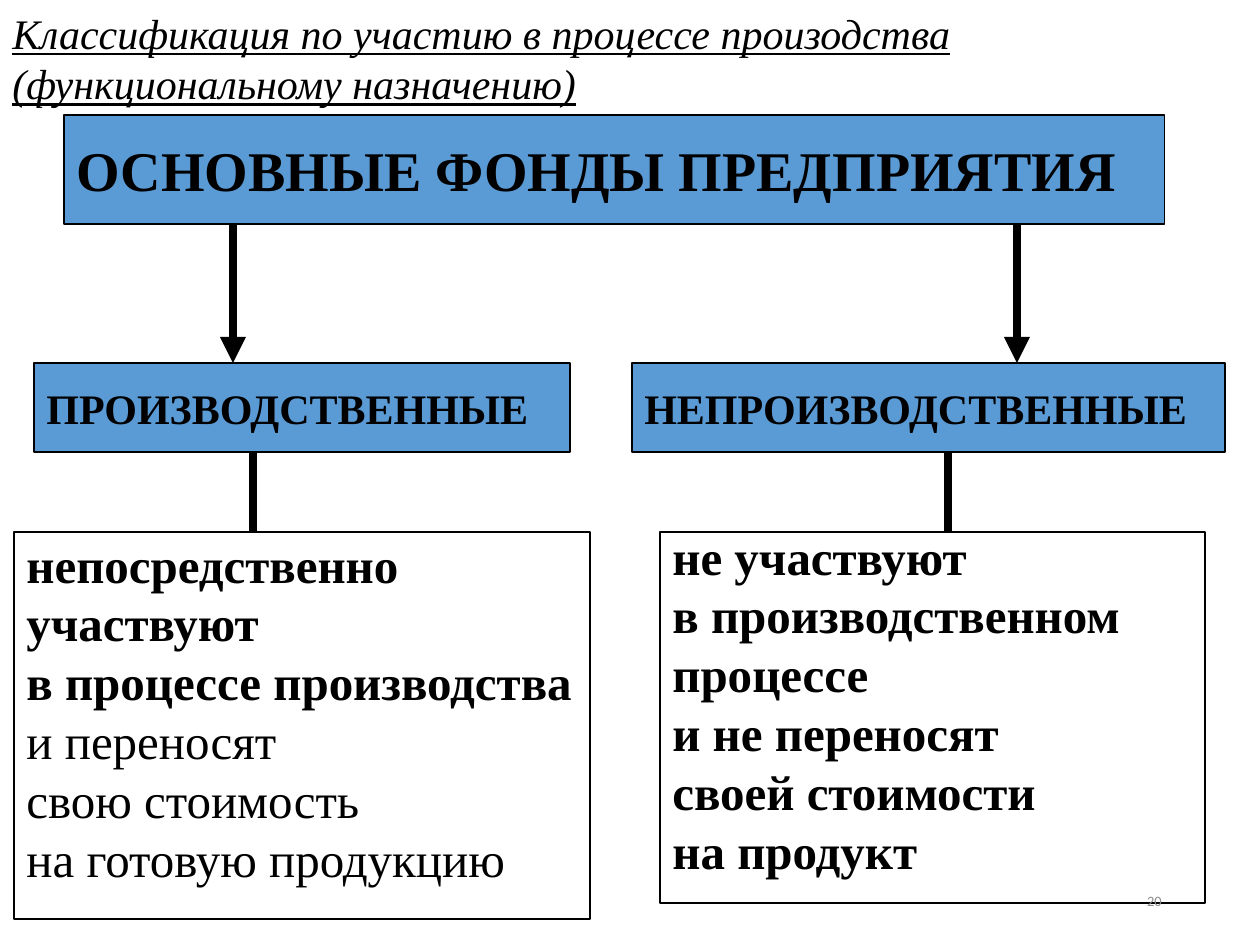
"""Build the slide on the functional classification of fixed assets."""
from lxml.etree import SubElement
from pptx import Presentation
from pptx.dml.color import RGBColor
from pptx.enum.shapes import MSO_CONNECTOR, MSO_SHAPE
from pptx.enum.text import MSO_ANCHOR, PP_ALIGN
from pptx.oxml.ns import qn
from pptx.util import Pt

PX = 914400 // 126
COLORS = {"box": "5B9BD5", "ink": "000000", "number": "8C8C8C"}
SERIF = "Times New Roman"

TITLE = "Классификация по участию в процессе произодства (функциональному назначению)"
HEADINGS = [
    ("ОСНОВНЫЕ ФОНДЫ ПРЕДПРИЯТИЯ", (64, 115, 1101, 109), 32),
    ("ПРОИЗВОДСТВЕННЫЕ", (34, 363, 536, 89), 24),
    ("НЕПРОИЗВОДСТВЕННЫЕ", (632, 363, 593, 89), 24),
]
DETAILS = [
    (["непосредственно", "участвуют", "в процессе производства",
      "и переносят", "свою стоимость", "на готовую продукцию"],
     3, (14, 532, 576, 387)),
    (["не участвуют", "в производственном", "процессе",
      "и не переносят", "своей стоимости", "на продукт"],
     6, (660, 532, 545, 371)),
]
ARROWS_X = [233, 1017]
LINKS_X = [253, 948]


def color(name):
    return RGBColor.from_string(COLORS[name])


def px(values):
    return [v * PX for v in values]


def write(sp, lines, size, bold=0, font=SERIF, ink="ink", spacing=None):
    tf = sp.text_frame
    tf.word_wrap = True
    tf.text = "\n".join(lines)
    for i, p in enumerate(tf.paragraphs):
        p.alignment = PP_ALIGN.LEFT
        if spacing:
            p.line_spacing = Pt(spacing)
        f = p.runs[0].font
        f.name, f.size, f.bold = font, Pt(size), i < bold
        f.color.rgb = color(ink)
    return tf


def add_box(s, at, fill=None):
    sp = s.shapes.add_shape(MSO_SHAPE.RECTANGLE, *px(at))
    sp.shadow.inherit = False
    if fill:
        sp.fill.solid()
        sp.fill.fore_color.rgb = color(fill)
    else:
        sp.fill.background()
    sp.line.color.rgb = color("ink")
    sp.line.width = Pt(0.75)
    sp.text_frame.vertical_anchor = MSO_ANCHOR.MIDDLE
    return sp


def add_line(s, x, top, bottom, arrow=False):
    c = s.shapes.add_connector(MSO_CONNECTOR.STRAIGHT, *px((x, top, x, bottom)))
    c.line.color.rgb = color("ink")
    c.line.width = Pt(5)
    if arrow:
        SubElement(c.line._get_or_add_ln(), qn("a:tailEnd"), type="triangle")
    SubElement(c._element.spPr, qn("a:effectLst"))


def main():
    prs = Presentation()
    prs.slide_width, prs.slide_height = px((1260, 945))
    s = prs.slides.add_slide(prs.slide_layouts[6])

    for text, at, size in HEADINGS:
        write(add_box(s, at, "box"), [text], size, bold=1)
    for x in ARROWS_X:
        add_line(s, x, 224, 363, arrow=True)
    for x in LINKS_X:
        add_line(s, x, 452, 532)
    for lines, bold, at in DETAILS:
        tf = write(add_box(s, at), lines, 28, bold, spacing=33.6)
        tf.margin_bottom = 36 * PX

    title = s.shapes.add_textbox(*px((0, 0, 1265, 64)))
    tf = write(title, [TITLE], 24, spacing=28.6)
    tf.margin_top = 8 * PX
    f = tf.paragraphs[0].runs[0].font
    f.italic = f.underline = True

    number = s.shapes.add_textbox(*px((891, 876, 283, 50)))
    tf = write(number, ["20"], 8.2, font="Calibri", ink="number")
    tf.vertical_anchor = MSO_ANCHOR.MIDDLE
    tf.paragraphs[0].alignment = PP_ALIGN.RIGHT

    prs.save("out.pptx")


if __name__ == "__main__":
    main()
